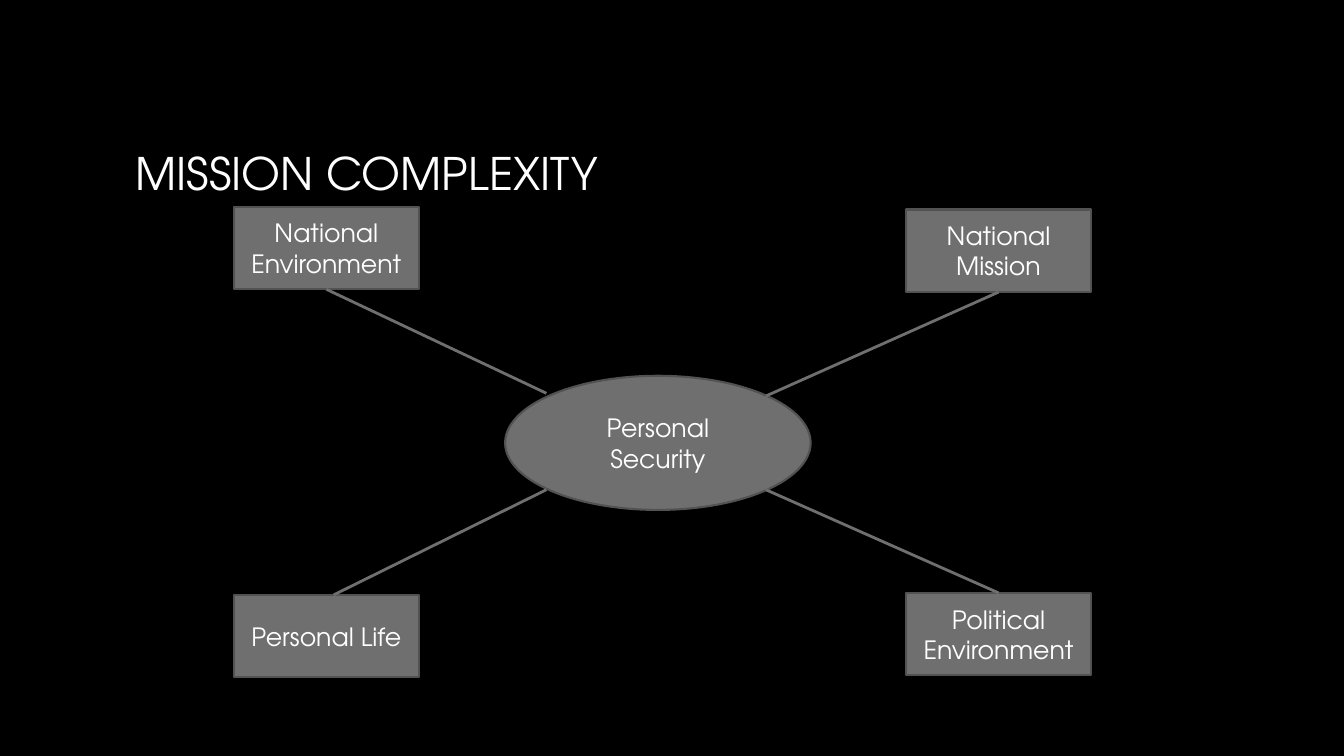
from lxml import etree
from pptx import Presentation, util as u
from pptx.dml.color import RGBColor
from pptx.enum import shapes, text
from pptx.oxml.ns import qn

TITLE = "MISSION COMPLEXITY"
TITLE_AT = (3.17, 1.7, 27.51, 5.28)
HUB = ("Personal Security", (12.73, 9.47, 7.7, 3.38))
BOX = (4.67, 2.08)
LEFT, RIGHT = 5.89, 22.83
NODES = [
    {"label": "National Mission", "at": (RIGHT, 5.28), "hub": (19.3, 9.98), "site": 2},
    {"label": "Political Environment", "at": (RIGHT, 14.94), "hub": (19.3, 12.34), "site": 0},
    {"label": "Personal Life", "at": (LEFT, 14.99), "hub": (13.77, 12.34), "end": (8.41, 14.99)},
    {"label": "National Environment", "at": (LEFT, 5.21), "hub": (13.77, 9.91), "site": 2},
]
THEME = {
    "font": "TeX Gyre Adventor", "title": 32, "body": 18, "edge": 1.5, "link": 2,
    "back": "000000", "ink": "FFFFFF", "fill": "6F6F6F", "rim": "525252",
}


def tint(name):
    return RGBColor.from_string(THEME[name])


def cm(vals):
    return [u.Cm(v) for v in vals]


def write(shape, words, size, align):
    frame = shape.text_frame
    for key, val in {"word_wrap": True, "vertical_anchor": text.MSO_ANCHOR.MIDDLE}.items():
        setattr(frame, key, val)
    para = frame.paragraphs[0]
    para.alignment = align
    run = para.add_run()
    run.text = words
    for key, val in {"name": THEME["font"], "size": u.Pt(THEME[size])}.items():
        setattr(run.font, key, val)
    run.font.color.rgb = tint("ink")


def add_node(slide, kind, words, at):
    shape = slide.shapes.add_shape(kind, *cm(at))
    shape.shadow.inherit = False
    shape.fill.solid()
    shape.fill.fore_color.rgb = tint("fill")
    shape.line.color.rgb = tint("rim")
    shape.line.width = u.Pt(THEME["edge"])
    write(shape, words, "body", text.PP_ALIGN.CENTER)
    return shape


def add_link(slide, node, box):
    ends = cm(node["hub"] + node.get("end", node["at"]))
    link = slide.shapes.add_connector(shapes.MSO_CONNECTOR.STRAIGHT, *ends)
    if "site" in node:
        link.end_connect(box, node["site"])
    link.line.color.rgb = tint("fill")
    link.line.width = u.Pt(THEME["link"])
    etree.SubElement(link._element.spPr, qn("a:effectLst"))


def main():
    deck = Presentation()
    deck.slide_width, deck.slide_height = cm((33.87, 19.05))
    slide = deck.slides.add_slide(deck.slide_layouts[6])
    slide.background.fill.solid()
    slide.background.fill.fore_color.rgb = tint("back")
    head = slide.shapes.add_textbox(*cm(TITLE_AT))
    write(head, TITLE, "title", text.PP_ALIGN.LEFT)
    add_node(slide, shapes.MSO_SHAPE.OVAL, *HUB)
    for node in NODES:
        box = add_node(slide, shapes.MSO_SHAPE.RECTANGLE, node["label"], node["at"] + BOX)
        add_link(slide, node, box)
    deck.save("out.pptx")


if __name__ == "__main__":
    main()
